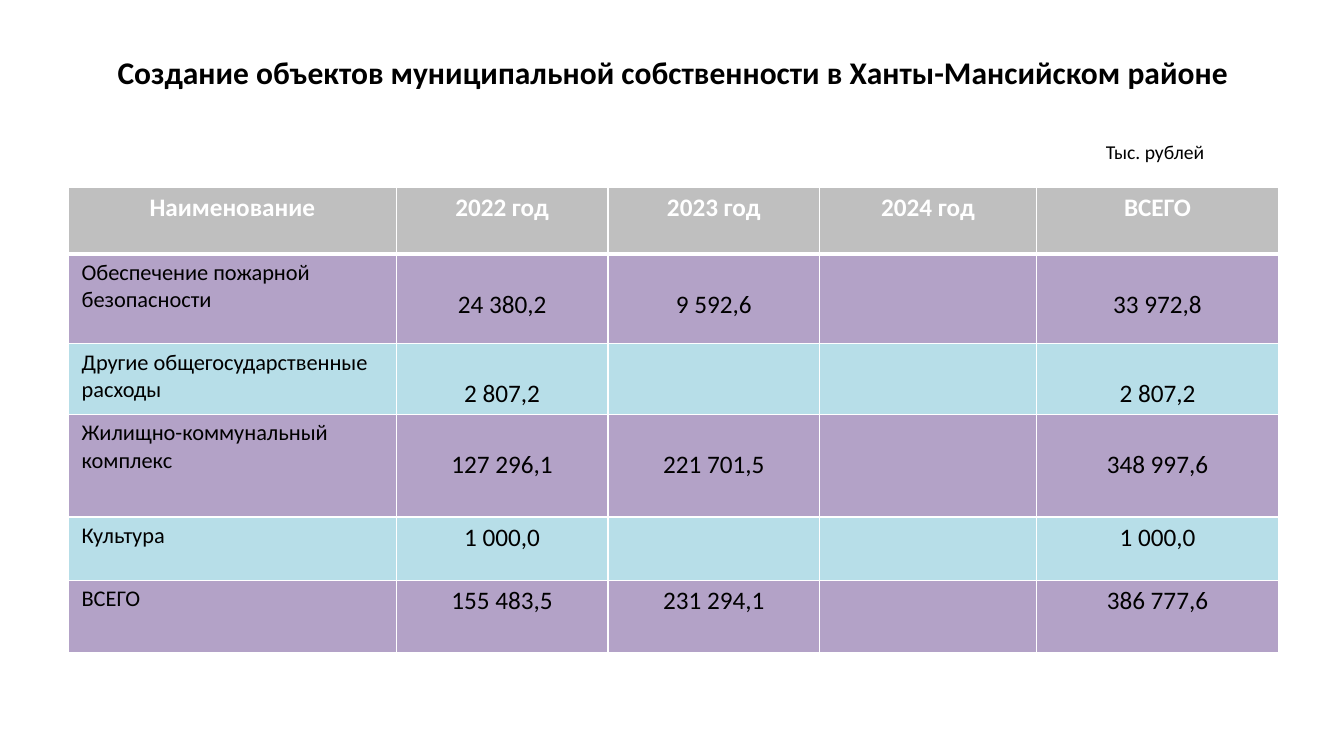
from lxml import etree
from pptx import Presentation
from pptx.dml.color import RGBColor
from pptx.enum import text
from pptx.oxml import ns
from pptx.util import Inches, Pt

FONT = "Calibri"
BLACK, WHITE, GRAY, PURPLE, BLUE = "000000", "FFFFFF", "BFBFBF", "B3A2C7", "B7DEE8"
COLUMN_WIDTHS = [3.25, 2.1, 2.1, 2.15, 2.4]
ROW_HEIGHTS = [0.66, 0.89, 0.7, 1.02, 0.63, 0.71]
LOWERED_ROWS = (1, 2, 3)
ROWS = [
    ["Наименование", "2022 год", "2023 год", "2024 год", "ВСЕГО"],
    ["Обеспечение пожарной безопасности", "24 380,2", "9 592,6", "", "33 972,8"],
    ["Другие общегосударственные расходы", "2 807,2", "", "", "2 807,2"],
    ["Жилищно-коммунальный комплекс", "127 296,1", "221 701,5", "", "348 997,6"],
    ["Культура", "1 000,0", "", "", "1 000,0"],
    ["ВСЕГО", "155 483,5", "231 294,1", "", "386 777,6"],
]


def color(value):
    return RGBColor.from_string(value)


def write(frame, words, size, ink=BLACK, bold=False, align=text.PP_ALIGN.CENTER):
    para = frame.paragraphs[0]
    para.text = words
    para.alignment = align
    para.font.name = FONT
    para.font.size = Pt(size)
    para.font.bold = bold
    para.font.color.rgb = color(ink)


def add_text(page, words, left, top, width, height, size, **style):
    box = page.shapes.add_textbox(Inches(left), Inches(top), Inches(width), Inches(height))
    box.text_frame.word_wrap = True
    box.text_frame.vertical_anchor = text.MSO_ANCHOR.MIDDLE
    write(box.text_frame, words, size, **style)


def add_borders(cell, widths):
    properties = cell._tc.get_or_add_tcPr()
    for position, (side, width) in enumerate(widths.items()):
        line = etree.Element(ns.qn(f"a:{side}"), w=str(Pt(width)))
        fill = etree.SubElement(line, ns.qn("a:solidFill"))
        etree.SubElement(fill, ns.qn("a:srgbClr"), val=WHITE)
        properties.insert(position, line)


def format_cell(cell, words, row, column):
    header = row == 0
    label = column == 0 and not header
    cell.margin_left = cell.margin_right = Inches(0.13)
    cell.margin_bottom = Inches(0.05)
    lowered = row in LOWERED_ROWS and not label
    cell.margin_top = Inches(0.35 if lowered else 0.05)
    cell.fill.solid()
    cell.fill.fore_color.rgb = color(GRAY if header else PURPLE if row % 2 else BLUE)
    write(
        cell.text_frame, words, 16 if label else 18,
        ink=WHITE if header else BLACK, bold=header,
        align=text.PP_ALIGN.LEFT if label else text.PP_ALIGN.CENTER,
    )
    add_borders(cell, {"lnL": 1, "lnR": 1, "lnT": 3 if row == 1 else 1, "lnB": 3 if header else 1})


def add_budget_table(page):
    frame = page.shapes.add_table(
        len(ROWS), len(COLUMN_WIDTHS), Inches(0.68), Inches(1.86),
        Inches(sum(COLUMN_WIDTHS)), Inches(sum(ROW_HEIGHTS)),
    )
    table = frame.table
    for column, width in zip(table.columns, COLUMN_WIDTHS):
        column.width = Inches(width)
    for row, height in zip(table.rows, ROW_HEIGHTS):
        row.height = Inches(height)
    for row, values in enumerate(ROWS):
        for column, words in enumerate(values):
            format_cell(table.cell(row, column), words, row, column)


def main():
    deck = Presentation()
    deck.slide_width, deck.slide_height = Inches(13.33), Inches(7.5)
    page = deck.slides.add_slide(deck.slide_layouts[6])
    add_text(
        page, "Создание объектов муниципальной собственности в Ханты-Мансийском районе",
        0.68, 0.36, 12, 0.71, 22.5, bold=True,
    )
    add_budget_table(page)
    add_text(page, "Тыс. рублей", 10.87, 1.33, 1.68, 0.34, 14, align=text.PP_ALIGN.LEFT)
    deck.save("out.pptx")


if __name__ == "__main__":
    main()
